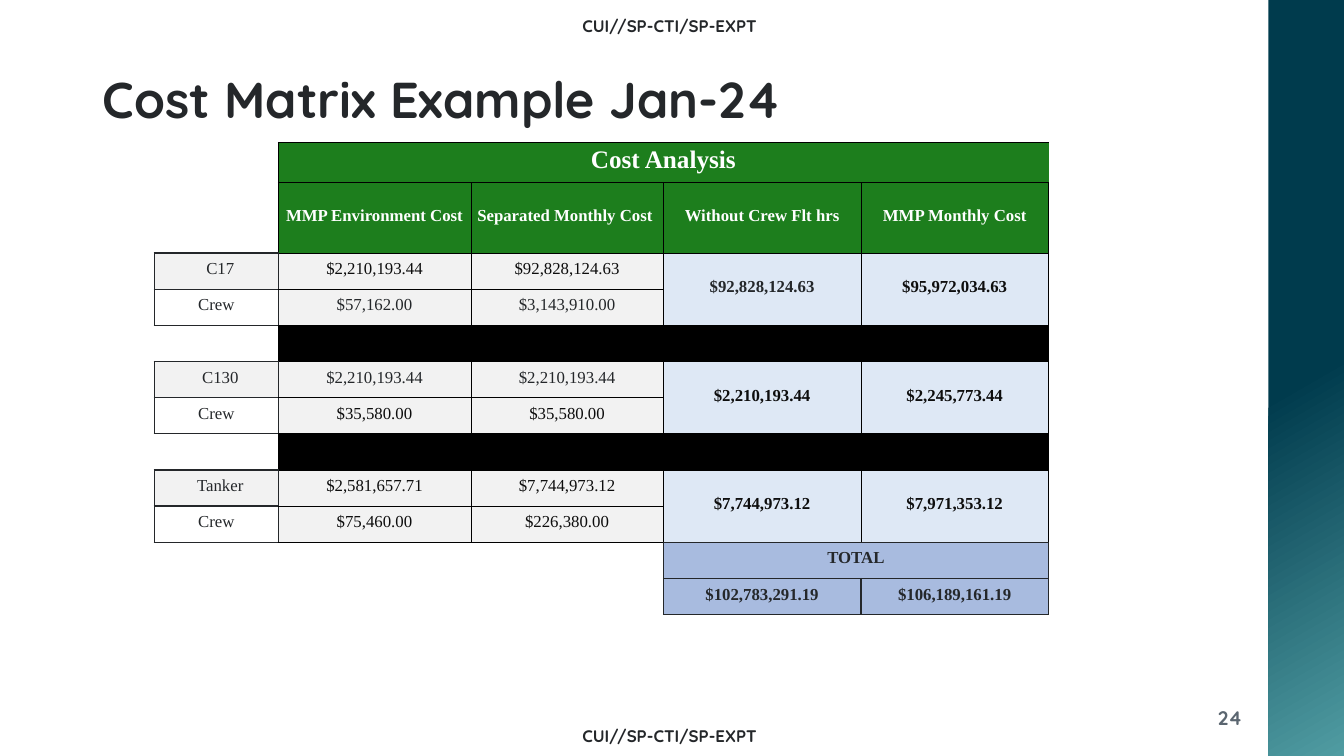
from dataclasses import dataclass

from lxml.etree import SubElement
from pptx import Presentation
from pptx.dml.color import RGBColor
from pptx.enum.shapes import MSO_SHAPE as Shape
from pptx.enum.text import MSO_ANCHOR as Anchor, MSO_AUTO_SIZE as AutoSize, PP_ALIGN as Align
from pptx.oxml.ns import qn
from pptx.util import Inches, Pt


@dataclass(frozen=True)
class Theme:
    ink: str = "24272A"
    deep: str = "0D0D0D"
    black: str = "000000"
    white: str = "FFFFFF"
    muted: str = "5B6670"
    green: str = "1D7E1D"
    gray: str = "F2F2F2"
    pale: str = "DEE8F5"
    blue: str = "A8BBDF"
    band_dark: str = "003B4D"
    band_light: str = "509CA2"
    sans: str = "Quicksand"
    serif: str = "Times New Roman"
    title: int = 36
    heading: int = 18
    number: int = 14
    body: int = 12


THEME = Theme()
TITLE = "Cost Matrix Example Jan-24"
MARKING = "CUI//SP-CTI/SP-EXPT "
PAGE_NUMBER = "24"
TABLE_TITLE = "Cost Analysis"
HEADERS = ["MMP Environment Cost", "Separated Monthly Cost ", "Without Crew Flt hrs", "MMP Monthly Cost"]
AIRCRAFT = [
    {"costs": [("C17", "$2,210,193.44", "$92,828,124.63", THEME.deep),
               ("Crew", "$57,162.00", "$3,143,910.00", THEME.ink)],
     "sums": [("$92,828,124.63", THEME.ink), ("$95,972,034.63", THEME.deep)]},
    {"costs": [("C130", "$2,210,193.44", "$2,210,193.44", THEME.ink),
               ("Crew", "$35,580.00", "$35,580.00", THEME.deep)],
     "sums": [("$2,210,193.44", THEME.deep), ("$2,245,773.44", THEME.deep)]},
    {"costs": [("Tanker", "$2,581,657.71", "$7,744,973.12", THEME.deep),
               ("Crew", "$75,460.00", "$226,380.00", THEME.deep)],
     "sums": [("$7,744,973.12", THEME.deep), ("$7,971,353.12", THEME.deep)]},
]
TOTAL = "TOTAL"
TOTALS = ["$102,783,291.19", "$106,189,161.19"]
COLUMNS = [1.23, 1.91, 1.91, 1.96, 1.86]
HEAD_ROWS = [0.4, 0.7]
BODY_ROWS = 10
TABLE_HEIGHT = 4.69
THIN = (THEME.black, 0.5)
STRONG = (THEME.ink, 1)
NO_STYLE = "{2D5ABB26-0587-4C30-8999-92F81FD0307C}"


def write(frame, text, *, size=THEME.body, color=THEME.ink, font=THEME.sans, bold=True, align=Align.CENTER):
    """Put one formatted run in the frame and return its paragraph."""
    para = frame.paragraphs[0]
    para.alignment = align
    span = para.add_run()
    span.text = text
    span.font.size = Pt(size)
    span.font.name = font
    span.font.bold = bold
    span.font.color.rgb = RGBColor.from_string(color)
    return para


def add_label(page, text, place, **style):
    """Add a wrapping text box."""
    box = page.shapes.add_textbox(*map(Inches, place))
    box.text_frame.word_wrap = True
    write(box.text_frame, text, **style)


def draw_borders(cell, line, sides="LRTB"):
    """Line the chosen sides of a cell."""
    color, width = line
    for side in sides:
        edge = SubElement(cell._tc.get_or_add_tcPr(), qn(f"a:ln{side}"), w=str(Pt(width)))
        SubElement(SubElement(edge, qn("a:solidFill")), qn("a:srgbClr"), val=color)


def fill_cell(cell, text=None, *, fill=None, line=THIN, sides="LRTB", left=0.01, **style):
    """Set the borders, fill, insets and text of a cell."""
    draw_borders(cell, line, sides)
    if fill:
        cell.fill.solid()
        cell.fill.fore_color.rgb = RGBColor.from_string(fill)
    if text:
        cell.vertical_anchor = Anchor.MIDDLE
        cell.margin_left = Inches(left)
        cell.margin_top = cell.margin_right = Inches(0.01)
        cell.margin_bottom = Inches(0.05)
        write(cell.text_frame, text, font=THEME.serif, **style)


def add_cost_table(page):
    """Add the cost matrix."""
    row_count = len(HEAD_ROWS) + BODY_ROWS
    frame = page.shapes.add_table(row_count, len(COLUMNS), Inches(1.53), Inches(1.41),
                                  Inches(sum(COLUMNS)), Inches(TABLE_HEIGHT))
    table = frame.table
    table.first_row = table.horz_banding = False
    next(frame._element.iter(qn("a:tableStyleId"))).text = NO_STYLE
    for column, width in zip(table.columns, COLUMNS):
        column.width = Inches(width)
    body_height = (TABLE_HEIGHT - sum(HEAD_ROWS)) / BODY_ROWS
    for row, height in zip(table.rows, HEAD_ROWS + [body_height] * BODY_ROWS):
        row.height = Inches(height)
    for cell in table.iter_cells():
        cell.margin_left = cell.margin_right = cell.margin_top = cell.margin_bottom = 0

    table.cell(0, 1).merge(table.cell(0, 4))
    fill_cell(table.cell(0, 1), TABLE_TITLE, fill=THEME.green, sides="LTB", size=THEME.heading, color=THEME.white)
    for column, header in enumerate(HEADERS, 1):
        fill_cell(table.cell(1, column), header, fill=THEME.green, color=THEME.white)

    for group, aircraft in enumerate(AIRCRAFT):
        top = len(HEAD_ROWS) + 3 * group
        for offset, (label, *costs, color) in enumerate(aircraft["costs"]):
            row = top + offset
            shade, left = (None, 0.01) if offset else (THEME.gray, 0.09)
            fill_cell(table.cell(row, 0), label, fill=shade, line=STRONG, left=left, bold=False)
            for column, cost in enumerate(costs, 1):
                fill_cell(table.cell(row, column), cost, fill=THEME.gray, color=color, bold=False)
        for column, (amount, color) in enumerate(aircraft["sums"], 3):
            table.cell(top, column).merge(table.cell(top + 1, column))
            fill_cell(table.cell(top, column), amount, fill=THEME.pale, color=color)
        if group < len(AIRCRAFT) - 1:
            for column in range(1, len(COLUMNS)):
                fill_cell(table.cell(top + 2, column), fill=THEME.black)

    last = row_count - 1
    table.cell(last - 1, 3).merge(table.cell(last - 1, 4))
    fill_cell(table.cell(last - 1, 3), TOTAL, fill=THEME.blue, line=STRONG)
    for column, amount in enumerate(TOTALS, 3):
        fill_cell(table.cell(last, column), amount, fill=THEME.blue, line=STRONG)


def add_side_band(page):
    """Add the gradient band at the right edge."""
    band = page.shapes.add_shape(Shape.RECTANGLE, Inches(12.58), 0, Inches(0.75), Inches(7.5))
    band.shadow.inherit = False
    band.line.fill.background()
    band.fill.gradient()
    band.fill.gradient_angle = 300
    stops = [(0.5, THEME.band_dark), (1, THEME.band_light)]
    for stop, (position, color) in zip(band.fill.gradient_stops, stops):
        stop.position = position
        stop.color.rgb = RGBColor.from_string(color)


def main():
    """Build the slide and save it."""
    deck = Presentation()
    deck.slide_width, deck.slide_height = Inches(13.33), Inches(7.5)
    page = deck.slides.add_slide(deck.slide_layouts[5])
    add_side_band(page)
    for top in (0.11, 7.15):
        add_label(page, MARKING, (2, top, 9.33, 0.24))
    add_label(page, PAGE_NUMBER, (11.5, 6.95, 0.92, 0.4), size=THEME.number, color=THEME.muted, align=Align.RIGHT)

    title = page.shapes.title
    title.left, title.top, title.width, title.height = map(Inches, (0.92, 0.37, 11.5, 0.96))
    title.text_frame.auto_size = AutoSize.NONE
    title.text_frame.vertical_anchor = Anchor.BOTTOM
    para = write(title.text_frame, TITLE, size=THEME.title, align=Align.LEFT)
    para.line_spacing = 0.9
    add_cost_table(page)
    deck.save("out.pptx")


if __name__ == "__main__":
    main()
